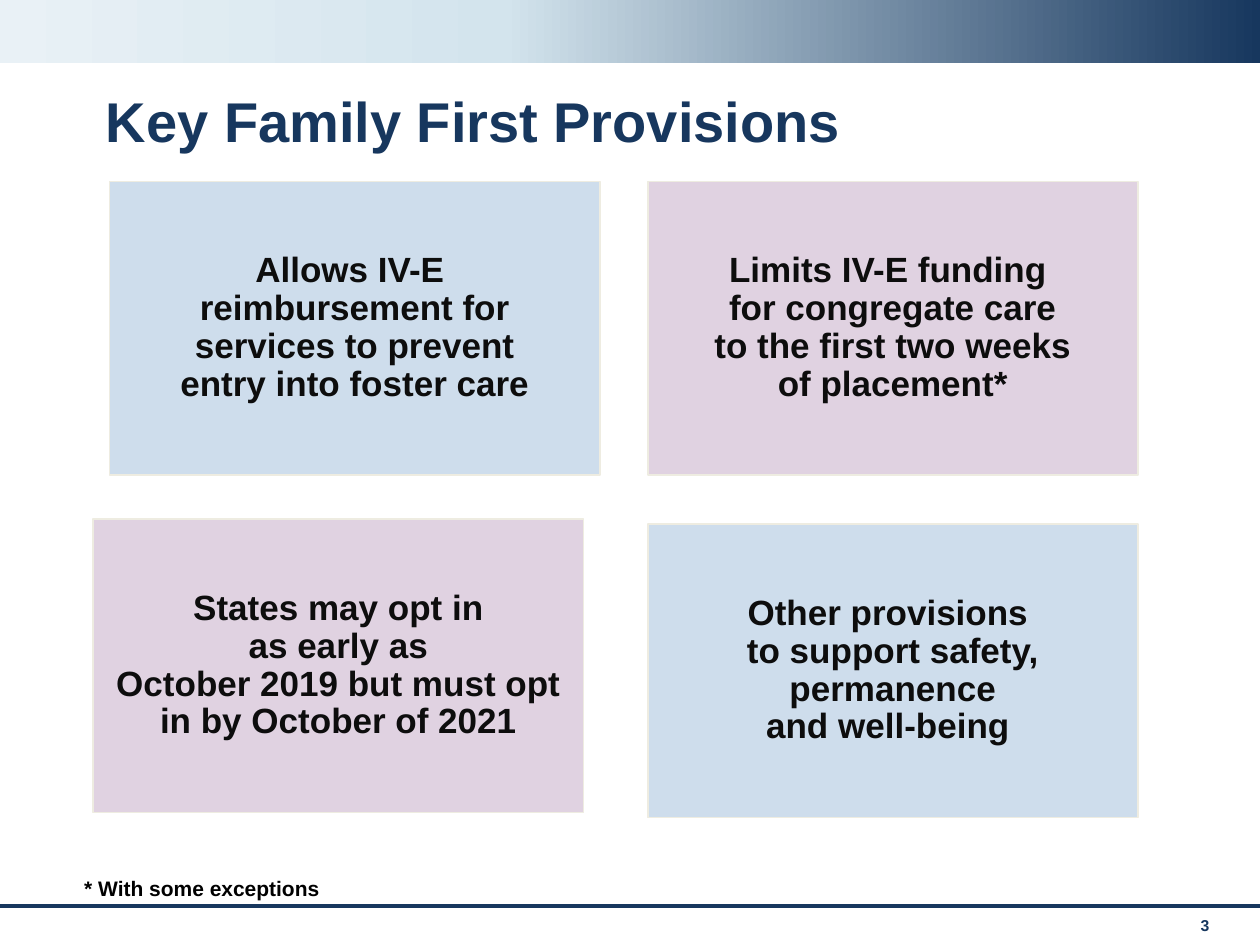
from copy import deepcopy
from dataclasses import dataclass

from lxml import etree
from pptx import Presentation
from pptx.dml.color import RGBColor
from pptx.enum.shapes import MSO_CONNECTOR, MSO_SHAPE
from pptx.enum.text import MSO_ANCHOR, PP_ALIGN
from pptx.oxml.ns import qn
from pptx.util import Inches, Pt

RECTANGLE = MSO_SHAPE.RECTANGLE
STRAIGHT = MSO_CONNECTOR.STRAIGHT
TOP, MIDDLE, BOTTOM = MSO_ANCHOR.TOP, MSO_ANCHOR.MIDDLE, MSO_ANCHOR.BOTTOM
LEFT, CENTER = PP_ALIGN.LEFT, PP_ALIGN.CENTER

NAVY, BLUE, PURPLE = "17375E", "CEDDEC", "6D2E75"
CARD_WIDTH, CARD_HEIGHT = 3.89, 2.33


@dataclass
class Card:
    left: float
    top: float
    fill: str
    text: str
    opacity: int = 100  # percent


CARDS = [
    Card(0.87, 1.44, BLUE,
         "Allows IV-E \vreimbursement for\vservices to prevent\ventry into foster care"),
    Card(5.14, 1.44, PURPLE,
         "Limits IV-E funding \vfor congregate care\vto the first two weeks\vof placement*", 21),
    Card(0.74, 4.12, PURPLE,
         "States may opt in\vas early as\vOctober 2019 but must opt in by October of 2021", 21),
    Card(5.14, 4.16, BLUE,
         "Other provisions \vto support safety, permanence\vand well-being "),
]


def rgb(color: str) -> RGBColor:
    return RGBColor.from_string(color)


def place(shape, left: float, top: float, width: float, height: float) -> None:
    shape.left, shape.top = Inches(left), Inches(top)
    shape.width, shape.height = Inches(width), Inches(height)


def write(shape, text: str, size: float, color: str, anchor=TOP, align=LEFT,
          spacing: float = 1.0) -> None:
    frame = shape.text_frame
    frame.word_wrap = True
    frame.vertical_anchor = anchor
    para = frame.paragraphs[0]
    para.text = text
    para.alignment = align
    para.line_spacing = spacing
    para.font.name = "Arial"
    para.font.size = Pt(size)
    para.font.bold = True
    para.font.color.rgb = rgb(color)


def add_text(slide, left: float, top: float, width: float, height: float,
             text: str, size: float, color: str, anchor=TOP) -> None:
    box = slide.shapes.add_textbox(Inches(left), Inches(top), Inches(width), Inches(height))
    write(box, text, size, color, anchor)


def add_rectangle(slide, left: float, top: float, width: float, height: float):
    shape = slide.shapes.add_shape(
        RECTANGLE, Inches(left), Inches(top), Inches(width), Inches(height))
    shape.shadow.inherit = False
    return shape


def add_banner(slide) -> None:
    banner = add_rectangle(slide, 0, 0, 10, 0.5)
    banner.line.fill.background()
    fill = banner.fill
    fill.gradient()
    fill.gradient_angle = 180
    # The default gradient has two stops; add a third
    stop_list = banner.element.spPr.find(".//" + qn("a:gsLst"))
    stop_list.append(deepcopy(stop_list[-1]))
    stops = [(0, NAVY), (0.6, "D3E4ED"), (1, "E9F1F6")]
    for stop, (position, color) in zip(fill.gradient_stops, stops):
        stop.position = position
        stop.color.rgb = rgb(color)


def add_rule(slide) -> None:
    rule = slide.shapes.add_connector(
        STRAIGHT, Inches(0), Inches(7.19), Inches(10), Inches(7.19))
    rule.line.color.rgb = rgb(NAVY)
    rule.line.width = Pt(2.25)
    etree.SubElement(rule.element.spPr, qn("a:effectLst"))


def add_card(slide, card: Card) -> None:
    shape = add_rectangle(slide, card.left, card.top, CARD_WIDTH, CARD_HEIGHT)
    shape.fill.solid()
    shape.fill.fore_color.rgb = rgb(card.fill)
    if card.opacity < 100:
        color = shape.element.spPr.find(qn("a:solidFill"))[0]
        etree.SubElement(color, qn("a:alpha"), val=str(card.opacity * 1000))
    shape.line.color.rgb = rgb("EEECE1")
    shape.line.width = Pt(1)
    frame = shape.text_frame
    frame.margin_left = frame.margin_right = Inches(0.08)
    frame.margin_top = frame.margin_bottom = Inches(0.08)
    write(shape, card.text, 20, "0D0D0D", MIDDLE, CENTER, 0.9)


def main() -> None:
    deck = Presentation()
    deck.slide_width, deck.slide_height = Inches(10), Inches(7.5)
    slide = deck.slides.add_slide(deck.slide_layouts[5])

    # Page frame
    add_text(slide, 9.43, 7.22, 0.44, 0.3, "3", 9, "15365E")
    add_banner(slide)
    add_rule(slide)

    # Title and footnote
    title = slide.shapes.title
    place(title, 0.74, 0.68, 8.58, 0.6)
    write(title, "Key Family First Provisions", 32, NAVY, BOTTOM, spacing=0.9)
    add_text(slide, 0.57, 6.84, 8.74, 0.36, "* With some exceptions", 12, "000000", BOTTOM)

    # Provisions
    for card in CARDS:
        add_card(slide, card)

    deck.save("out.pptx")


if __name__ == "__main__":
    main()
